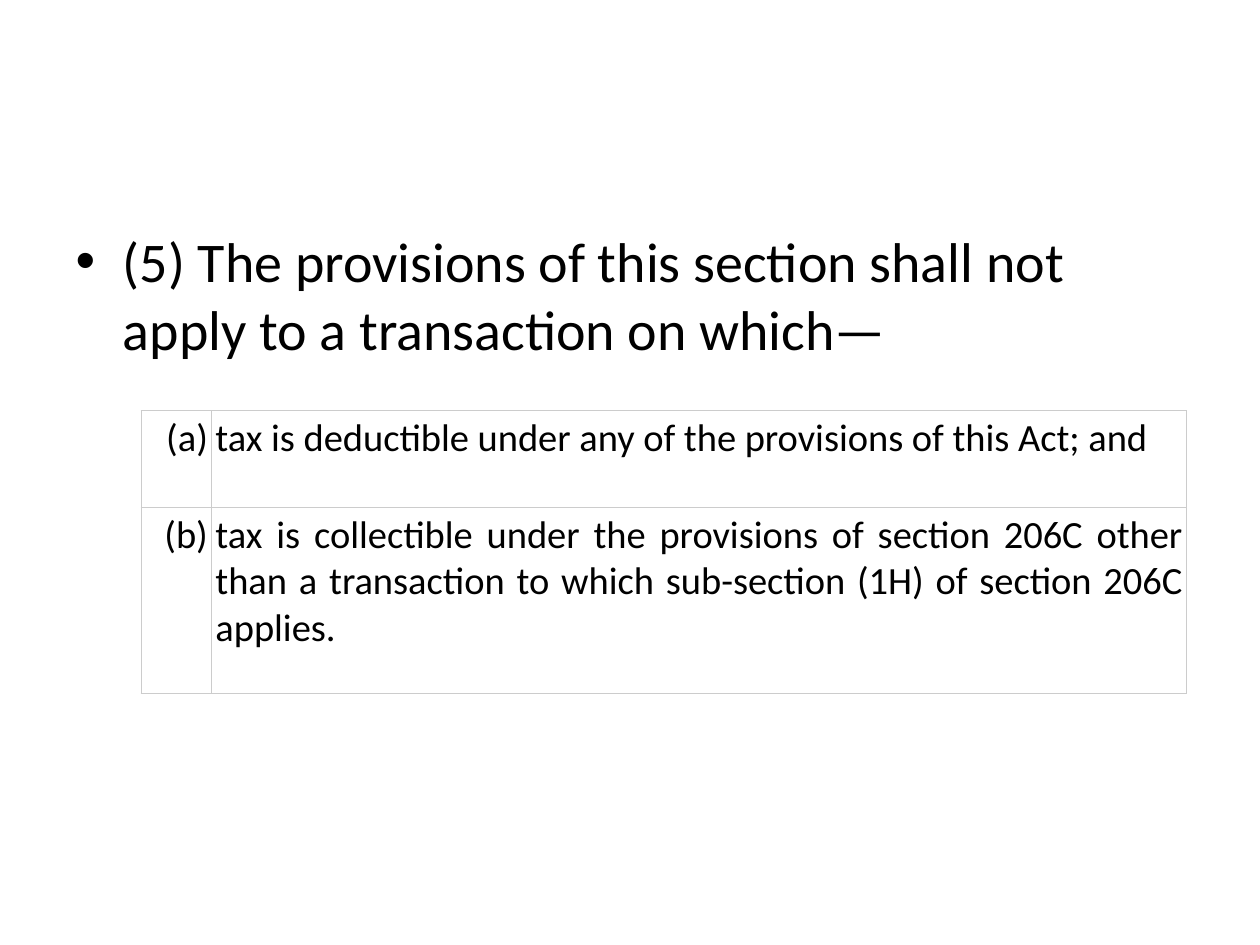
import pptx
import pptx.dml.color
import pptx.enum.text
import pptx.oxml
import pptx.oxml.ns
import pptx.util
from pptx.util import Inches

PROVISION = "(5) The provisions of this section shall not apply to a transaction on which—"
EXCEPTIONS = [
    ("(a)", "tax is deductible under any of the provisions of this Act; and"),
    ("(b)", "tax is collectible under the provisions of section 206C other than "
            "a transaction to which sub-section (1H) of section 206C applies."),
]
COLUMN_WIDTHS = [0.56, 7.74]
ROW_HEIGHTS = [0.77, 1.47]
CELL_MARGIN = Inches(0.03)
ALIGNMENTS = [pptx.enum.text.PP_ALIGN.RIGHT, pptx.enum.text.PP_ALIGN.JUSTIFY]

BLACK = pptx.dml.color.RGBColor(0x00, 0x00, 0x00)
WHITE = pptx.dml.color.RGBColor(0xFF, 0xFF, 0xFF)
BORDER_GREY = pptx.dml.color.RGBColor(0xCC, 0xCC, 0xCC)


def format_paragraph(paragraph, size):
    for run in paragraph.runs:
        run.font.name = "Calibri"
        run.font.size = pptx.util.Pt(size)
        run.font.color.rgb = BLACK


def add_borders(cell):
    properties = cell._tc.get_or_add_tcPr()
    for position, side in enumerate(("lnL", "lnR", "lnT", "lnB")):
        line = pptx.oxml.parse_xml(
            f'<a:{side} {pptx.oxml.ns.nsdecls("a")} w="{pptx.util.Pt(0.5)}">'
            f'<a:solidFill><a:srgbClr val="{BORDER_GREY}"/></a:solidFill></a:{side}>'
        )
        properties.insert(position, line)


def add_provision(slide):
    body = slide.placeholders[1]
    body.left, body.top = Inches(0.5), Inches(1.75)
    body.width, body.height = Inches(9), Inches(4.95)
    body.text_frame.text = PROVISION
    format_paragraph(body.text_frame.paragraphs[0], 32)


def add_exceptions(slide):
    frame = slide.shapes.add_table(
        len(EXCEPTIONS), len(COLUMN_WIDTHS), Inches(1.12), Inches(3.26),
        Inches(sum(COLUMN_WIDTHS)), Inches(sum(ROW_HEIGHTS)),
    )
    table = frame.table
    table.first_row = table.horz_banding = False
    for column, width in zip(table.columns, COLUMN_WIDTHS):
        column.width = Inches(width)
    for row, height, texts in zip(table.rows, ROW_HEIGHTS, EXCEPTIONS):
        row.height = Inches(height)
        for cell, text, alignment in zip(row.cells, texts, ALIGNMENTS):
            cell.text_frame.text = text
            cell.margin_left = cell.margin_right = CELL_MARGIN
            cell.margin_top = cell.margin_bottom = CELL_MARGIN
            cell.fill.solid()
            cell.fill.fore_color.rgb = WHITE
            paragraph = cell.text_frame.paragraphs[0]
            paragraph.alignment = alignment
            format_paragraph(paragraph, 22)
            add_borders(cell)


def main():
    presentation = pptx.Presentation()
    presentation.slide_width, presentation.slide_height = Inches(10), Inches(7.5)
    slide = presentation.slides.add_slide(presentation.slide_layouts[1])
    title = slide.shapes.title.element
    title.getparent().remove(title)
    add_provision(slide)
    add_exceptions(slide)
    presentation.save("out.pptx")


if __name__ == "__main__":
    main()
